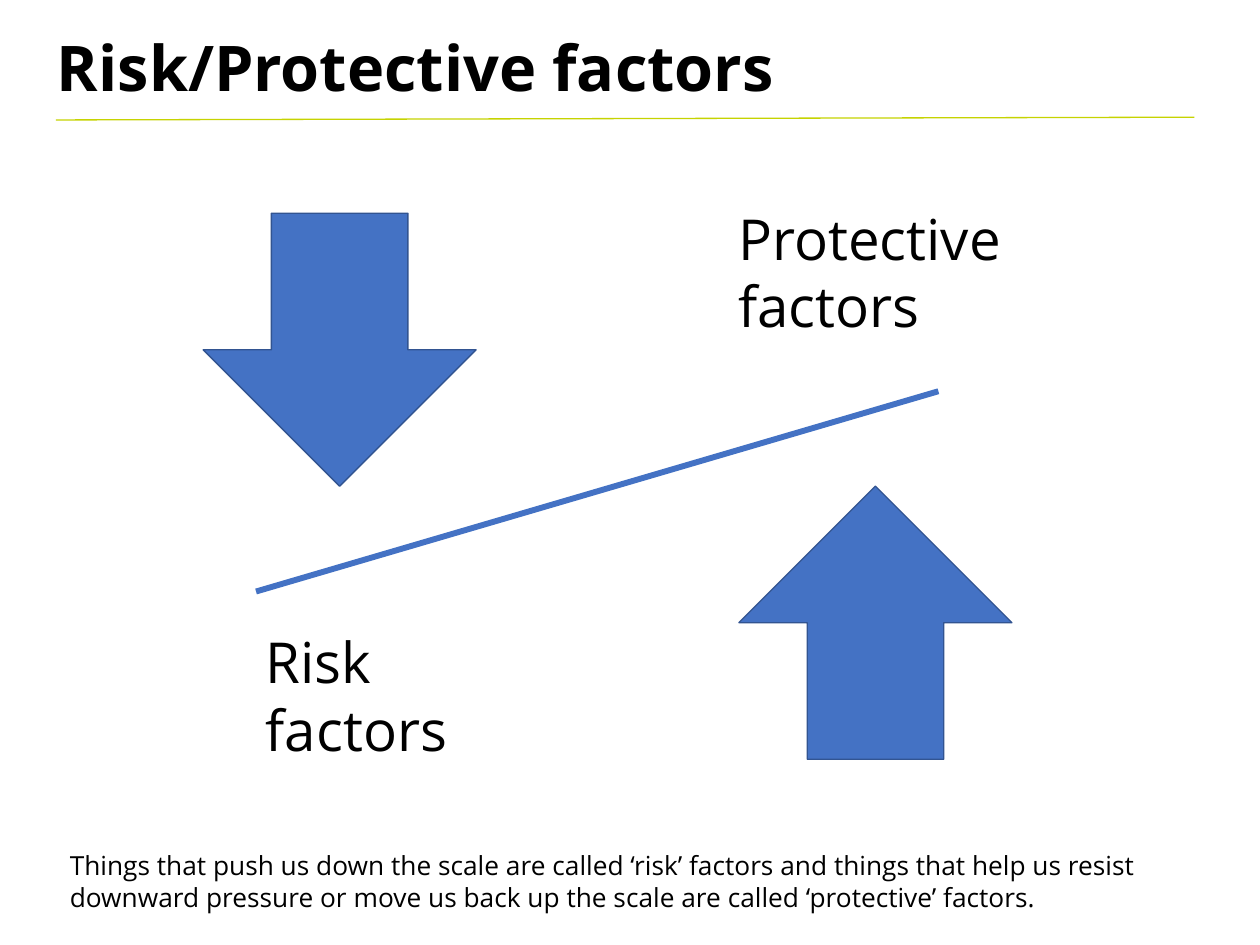
from lxml import etree
from pptx import Presentation
from pptx.dml.color import RGBColor
from pptx.enum import shapes, text
from pptx.oxml import ns
from pptx.util import Pt

COLORS = {"ink": "000000", "blue": "4472C4", "edge": "325491", "lime": "C6D301"}
FONT = "Open Sans"
ARROW_SIZE = 208


def color(name):
    return RGBColor.from_string(COLORS[name])


def write(sp, words, size, bold=False, inset=(9.6, 4.8), anchor=text.MSO_ANCHOR.TOP):
    tf = sp.text_frame
    tf.word_wrap = True
    tf.auto_size = text.MSO_AUTO_SIZE.NONE
    tf.vertical_anchor = anchor
    tf.margin_left = tf.margin_right = Pt(inset[0])
    tf.margin_top = tf.margin_bottom = Pt(inset[1])
    p = tf.paragraphs[0]
    p.alignment = text.PP_ALIGN.LEFT
    r = p.add_run()
    r.text = words
    r.font.name = FONT
    r.font.size = Pt(size)
    r.font.bold = bold
    r.font.color.rgb = color("ink")


def add_title(s, words, left, top, width, height):
    sp = s.shapes.title
    sp.left, sp.top, sp.width, sp.height = Pt(left), Pt(top), Pt(width), Pt(height)
    write(sp, words, 48, bold=True, anchor=text.MSO_ANCHOR.MIDDLE)


def add_text(s, words, left, top, width, height, size, **style):
    sp = s.shapes.add_textbox(Pt(left), Pt(top), Pt(width), Pt(height))
    write(sp, words, size, **style)


def add_arrow(s, left, top, rotation=0):
    sp = s.shapes.add_shape(shapes.MSO_SHAPE.DOWN_ARROW, Pt(left), Pt(top),
                            Pt(ARROW_SIZE), Pt(ARROW_SIZE))
    sp.rotation = rotation
    sp.shadow.inherit = False
    sp.fill.solid()
    sp.fill.fore_color.rgb = color("blue")
    sp.line.color.rgb = color("edge")
    sp.line.width = Pt(1)


def add_line(s, x1, y1, x2, y2, name, width):
    sp = s.shapes.add_connector(shapes.MSO_CONNECTOR.STRAIGHT,
                                Pt(x1), Pt(y1), Pt(x2), Pt(y2))
    sp.line.color.rgb = color(name)
    sp.line.width = Pt(width)
    etree.SubElement(sp._element.spPr, ns.qn("a:effectLst"))


def main():
    prs = Presentation()
    prs.slide_width, prs.slide_height = Pt(960), Pt(720)
    s = prs.slides.add_slide(prs.slide_layouts[5])

    add_title(s, "Risk/Protective factors", 33.8, 18.7, 790.6, 64)
    add_line(s, 42.5, 91.4, 910, 89.3, "lime", 1)

    add_arrow(s, 154.8, 162.5)
    add_arrow(s, 563, 370.4, rotation=180)
    add_line(s, 195.1, 450.7, 715, 298.1, "blue", 4.5)

    add_text(s, "Protective factors", 553, 150.5, 228.2, 113, 43)
    add_text(s, "Risk factors", 193, 473, 228.2, 113, 43)
    add_text(s, "Things that push us down the scale are called ‘risk’ factors and things "
                "that help us resist downward pressure or move us back up the scale are "
                "called ‘protective’ factors.",
             46.1, 643.7, 867.6, 55.4, 20, inset=(7.2, 3.6))

    prs.save("out.pptx")


if __name__ == "__main__":
    main()
